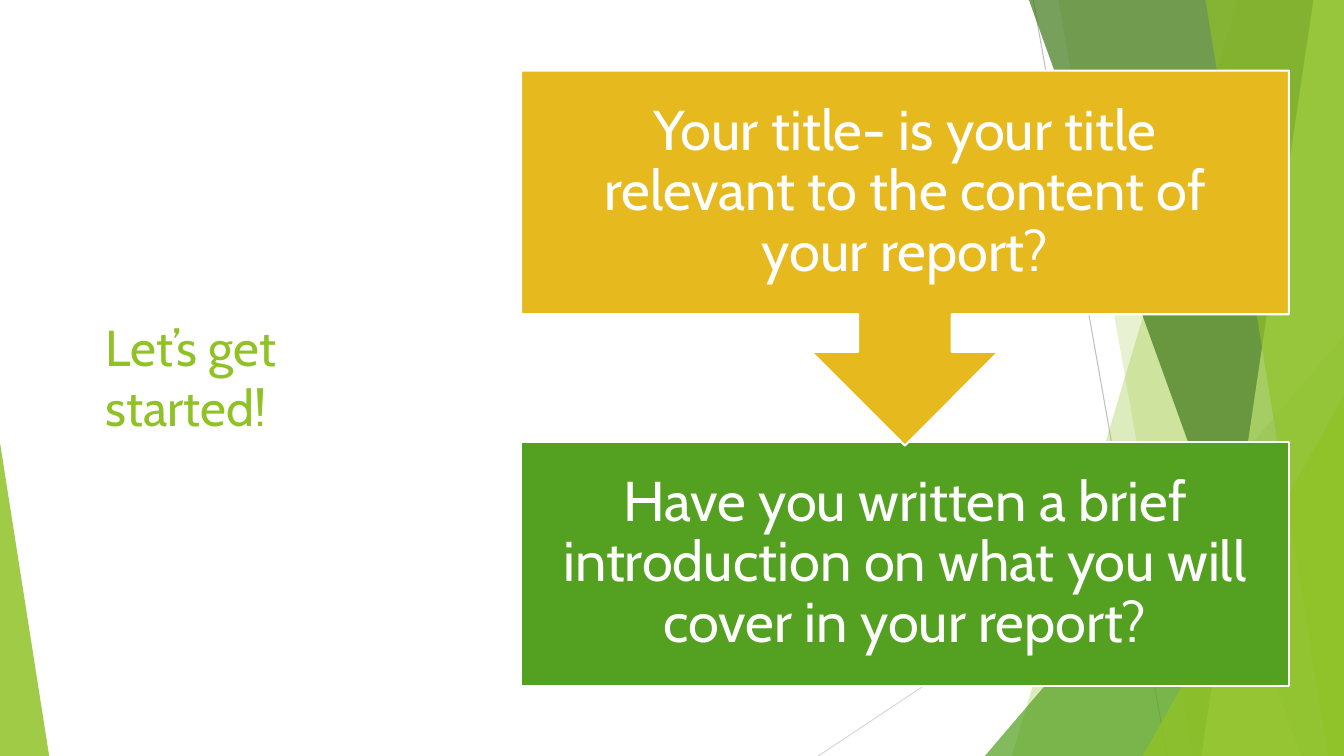
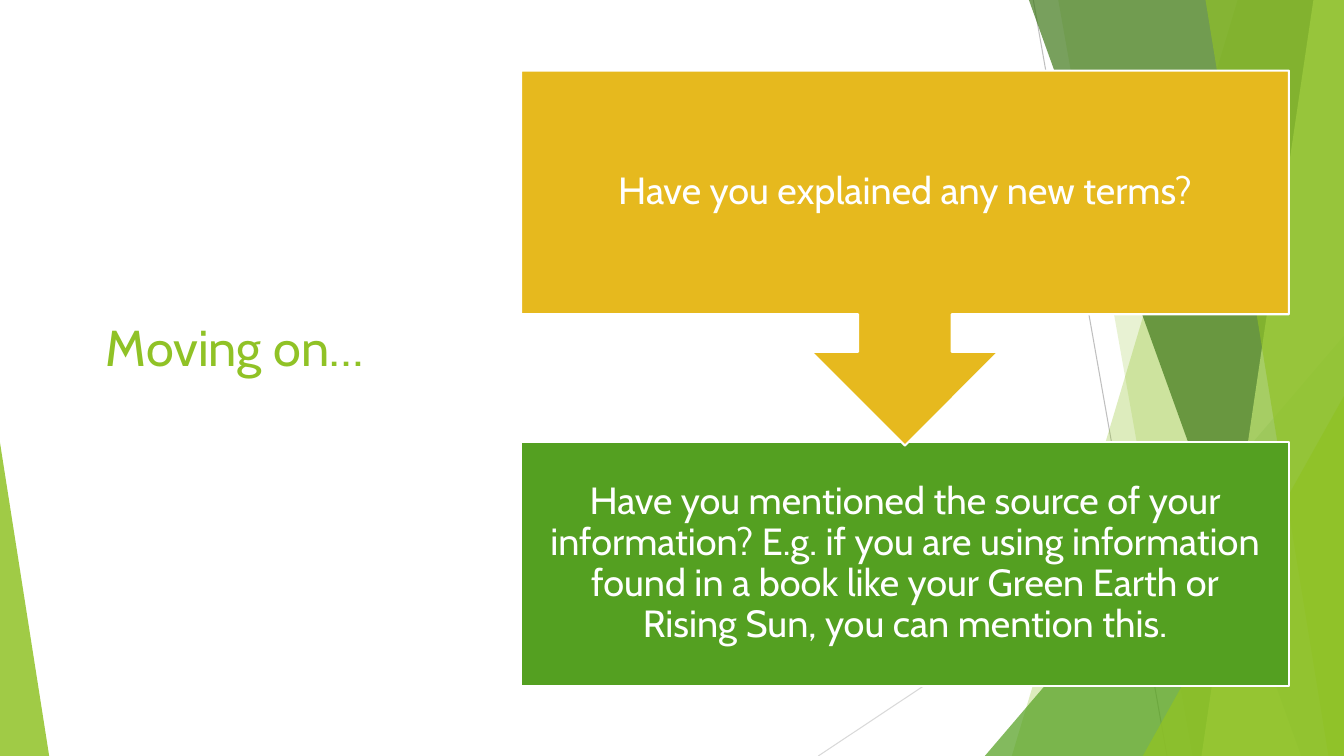
from dataclasses import dataclass
from typing import Any, NamedTuple

from lxml.etree import SubElement
from pptx import Presentation
from pptx.dml.color import RGBColor as Rgb
from pptx.enum.shapes import MSO_CONNECTOR as Link, MSO_SHAPE as Kind
from pptx.enum.text import MSO_ANCHOR as Anchor, MSO_AUTO_SIZE as Fit, PP_ALIGN as Align
from pptx.oxml.ns import qn
from pptx.util import Cm, Pt

WIDE, HIGH = 33.87, 19.05


@dataclass(frozen=True)
class Theme:
    font: str = "Cabin"
    lime: str = "90C226"
    green: str = "54A021"
    dark: str = "3F7819"
    pale: str = "C0E474"
    gold: str = "E6B91E"
    white: str = "FFFFFF"
    grey: str = "BFBFBF"
    mist: str = "D9D9D9"
    title: float = 36
    large: float = 40
    small: float = 27
    hair: float = 0.75
    edge: float = 1.5


LOOK = Theme()


class Ray(NamedTuple):
    start: tuple[float, float]
    end: tuple[float, float]
    color: str


class Band(NamedTuple):
    """A strip from the right edge to a slanted left side."""
    top: float
    foot: float
    color: str
    alpha: int


class Wedge(NamedTuple):
    """A right triangle in a bottom corner; side is 0 for left, 1 for right."""
    side: int
    width: float
    height: float
    color: str
    alpha: int


class Step(NamedTuple):
    kind: Any
    top: float
    height: float
    color: str


class Page(NamedTuple):
    title: str
    size: float
    inset: float
    texts: tuple[str, str]


RAYS = (
    Ray((26.04, 0), (29.41, HIGH), LOOK.grey),
    Ray((WIDE, 10.24), (20.62, HIGH), LOOK.mist),
)
DECOR = (
    Band(31.19, 25.5, LOOK.lime, 30),
    Band(26.67, 30.05, LOOK.lime, 20),
    Wedge(1, 9.05, 10.59, LOOK.green, 72),
    Band(25.93, 32.79, LOOK.dark, 70),
    Band(33.1, 30.28, LOOK.pale, 70),
    Band(30.38, 33.48, LOOK.lime, 65),
    Wedge(1, 5.07, 9.07, LOOK.lime, 80),
    Wedge(0, 1.24, 7.9, LOOK.lime, 85),
)
STEP_X, STEP_W = 13.13, 19.35
STEPS = (
    Step(Kind.RECTANGLE, 11.13, 6.15, LOOK.green),
    Step(Kind.DOWN_ARROW_CALLOUT, 1.78, 9.45, LOOK.gold),
)
PAGES = (
    Page("Let’s get started!", LOOK.large, 0.79, (
        "Have you written a brief introduction on what you will cover in your report?",
        "Your title- is your title relevant to the content of your report?",
    )),
    Page("Moving on…", LOOK.small, 0.53, (
        "Have you mentioned the source of your information? E.g. if you are using "
        "information found in a book like your Green Earth or Rising Sun, "
        "you can mention this.",
        "Have you explained any new terms?",
    )),
)


def put(item: Any, form: dict[str, Any]) -> None:
    for name, value in form.items():
        setattr(item, name, value)


def paint(shape: Any, color: str) -> None:
    shape.shadow.inherit = False
    shape.fill.solid()
    shape.fill.fore_color.rgb = Rgb.from_string(color)


def write(frame: Any, text: str, size: float, color: str, form: dict[str, Any]) -> None:
    para = frame.paragraphs[0]
    put(para, form)
    run = para.add_run()
    run.text = text
    put(run.font, {"name": LOOK.font, "size": Pt(size)})
    run.font.color.rgb = Rgb.from_string(color)


def draw_ray(shapes: Any, ray: Ray) -> None:
    ends = (Cm(v) for v in ray.start + ray.end)
    line = shapes.add_connector(Link.STRAIGHT, *ends)
    line.line.width = Pt(LOOK.hair)
    line.line.color.rgb = Rgb.from_string(ray.color)
    SubElement(line.element.xpath("p:spPr")[0], qn("a:effectLst"))


def draw_decor(shapes: Any, part: Band | Wedge) -> None:
    if isinstance(part, Band):
        pen = shapes.build_freeform(Cm(part.top), 0)
        spots = ((WIDE, 0), (WIDE, HIGH), (part.foot, HIGH))
        pen.add_line_segments([(Cm(x), Cm(y)) for x, y in spots])
        shape = pen.convert_to_shape()
    else:
        left = part.side * (WIDE - part.width)
        box = (left, HIGH - part.height, part.width, part.height)
        shape = shapes.add_shape(Kind.ISOSCELES_TRIANGLE, *(Cm(v) for v in box))
        shape.adjustments[0] = part.side
    paint(shape, part.color)
    shape.line.fill.background()
    tint = shape.element.xpath("p:spPr//a:srgbClr")[0]
    SubElement(tint, qn("a:alpha"), val=str(part.alpha * 1000))


def set_layout(layout: Any) -> None:
    for hold in list(layout.placeholders)[1:]:
        hold.element.getparent().remove(hold.element)
    title = layout.placeholders[0]
    put(title, {"left": Cm(2.41), "top": Cm(4.78), "width": Cm(8.61), "height": Cm(9.78)})
    put(title.text_frame, {
        "margin_top": Cm(3.18), "vertical_anchor": Anchor.TOP,
        "word_wrap": True, "auto_size": Fit.NONE,
    })


def add_decor(slide: Any) -> None:
    """Draw the backdrop, then hand it to the layout that all slides share."""
    group = slide.shapes.add_group_shape()
    for ray in RAYS:
        draw_ray(group.shapes, ray)
    for part in DECOR:
        draw_decor(group.shapes, part)
    slide.slide_layout.shapes.element.append(group.element)


def draw_step(shapes: Any, step: Step, text: str, page: Page) -> None:
    box = (STEP_X, step.top, STEP_W, step.height)
    shape = shapes.add_shape(step.kind, *(Cm(v) for v in box))
    paint(shape, step.color)
    shape.line.width = Pt(LOOK.edge)
    shape.line.color.rgb = Rgb.from_string(LOOK.white)
    sides = ("left", "top", "right", "bottom")
    put(shape.text_frame, {f"margin_{side}": Cm(page.inset) for side in sides})
    put(shape.text_frame, {"word_wrap": True, "vertical_anchor": Anchor.MIDDLE})
    write(shape.text_frame, text, page.size, LOOK.white,
          {"alignment": Align.CENTER, "line_spacing": 0.9})


def main() -> None:
    deck = Presentation()
    put(deck, {"slide_width": Cm(WIDE), "slide_height": Cm(HIGH)})
    layout = deck.slide_layouts[5]
    set_layout(layout)
    for page in PAGES:
        slide = deck.slides.add_slide(layout)
        if page is PAGES[0]:
            add_decor(slide)
        write(slide.shapes.title.text_frame, page.title, LOOK.title, LOOK.lime,
              {"alignment": Align.LEFT})
        for step, text in zip(STEPS, page.texts):
            draw_step(slide.shapes, step, text, page)
    deck.save("out.pptx")


if __name__ == "__main__":
    main()
